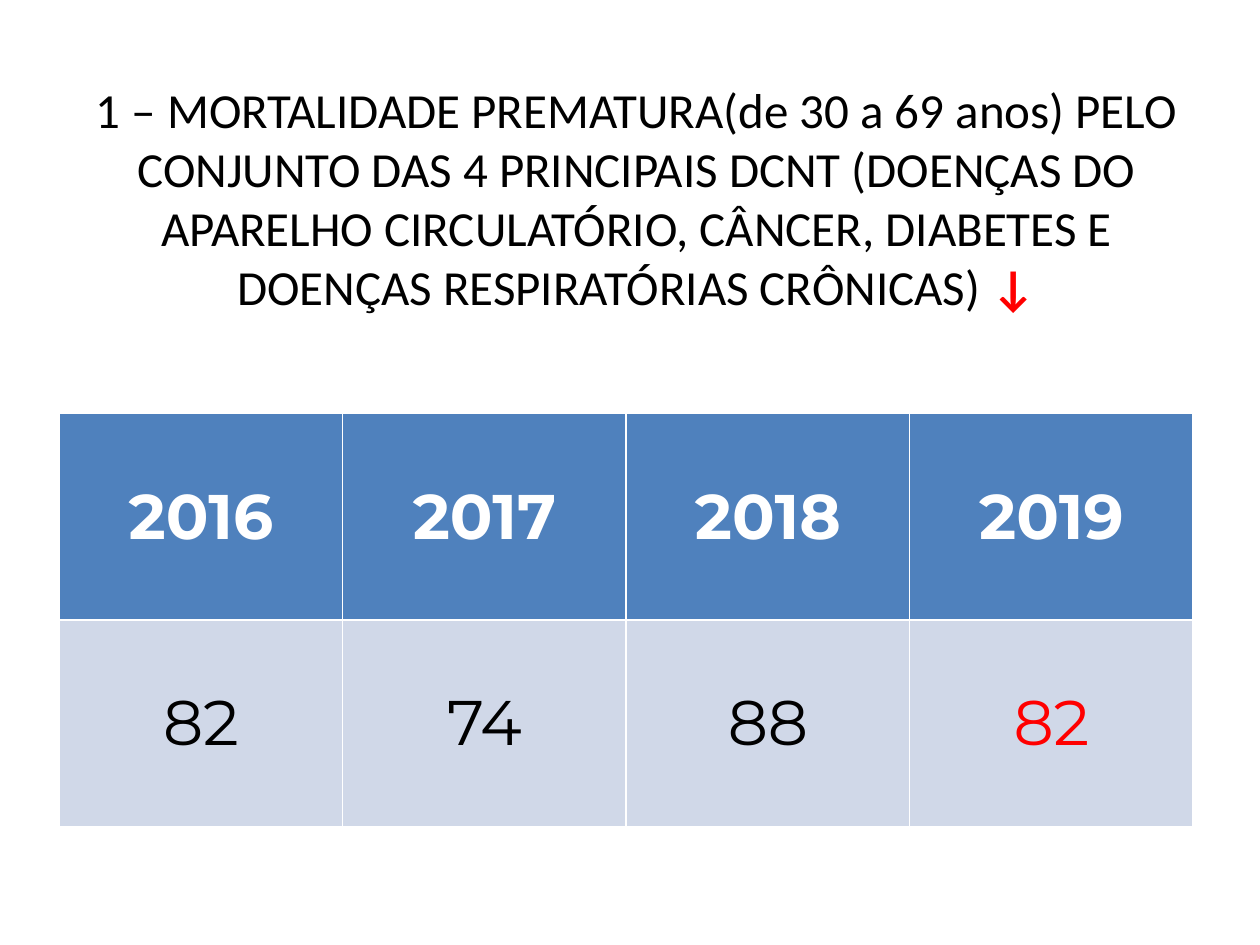
from pptx import Presentation
from pptx.dml.color import RGBColor
from pptx.enum.text import MSO_ANCHOR, PP_ALIGN
from pptx.util import Inches, Pt

CENTER = PP_ALIGN.CENTER
MIDDLE = MSO_ANCHOR.MIDDLE

BLACK = RGBColor(0x00, 0x00, 0x00)
WHITE = RGBColor(0xFF, 0xFF, 0xFF)
RED = RGBColor(0xFF, 0x00, 0x00)
HEADER_BLUE = RGBColor(0x4F, 0x81, 0xBD)
BODY_BLUE = RGBColor(0xD0, 0xD8, 0xE8)

TITLE_RUNS = [
    ("1 – MORTALIDADE PREMATURA(de 30 a 69 anos) PELO CONJUNTO DAS 4 "
     "PRINCIPAIS DCNT (DOENÇAS DO APARELHO CIRCULATÓRIO, CÂNCER, DIABETES E "
     "DOENÇAS RESPIRATÓRIAS CRÔNICAS)", BLACK, False),
    (" ↓", RED, True),
]
# year, deaths, colour of the deaths figure
DEATHS_BY_YEAR = [
    ("2016", "82", BLACK),
    ("2017", "74", BLACK),
    ("2018", "88", BLACK),
    ("2019", "82", RED),
]
TABLE_WIDTH, TABLE_HEIGHT = 9, 3.28


def add_run(paragraph, text, font_name, size, color, bold):
    paragraph.alignment = CENTER
    run = paragraph.add_run()
    run.text = text
    run.font.name = font_name
    run.font.size = Pt(size)
    run.font.bold = bold
    run.font.color.rgb = color


def fill_cell(cell, text, background, color, bold):
    cell.fill.solid()
    cell.fill.fore_color.rgb = background
    cell.vertical_anchor = MIDDLE
    add_run(cell.text_frame.paragraphs[0], text, "Montserrat", 36, color, bold)


prs = Presentation()
prs.slide_width, prs.slide_height = Inches(10), Inches(7.5)
slide = prs.slides.add_slide(prs.slide_layouts[6])

title = slide.shapes.add_textbox(
    Inches(0.55), Inches(0.16), Inches(9), Inches(2.81)).text_frame
title.word_wrap = True
title.vertical_anchor = MIDDLE
for text, color, bold in TITLE_RUNS:
    add_run(title.paragraphs[0], text, "Calibri", 28, color, bold)

# The default table style supplies the white rules between cells.
deaths_table = slide.shapes.add_table(
    2, len(DEATHS_BY_YEAR), Inches(0.47), Inches(3.28),
    Inches(TABLE_WIDTH), Inches(TABLE_HEIGHT)).table
for column, (year, deaths, color) in enumerate(DEATHS_BY_YEAR):
    fill_cell(deaths_table.cell(0, column), year, HEADER_BLUE, WHITE, True)
    fill_cell(deaths_table.cell(1, column), deaths, BODY_BLUE, color, False)

prs.save("out.pptx")
